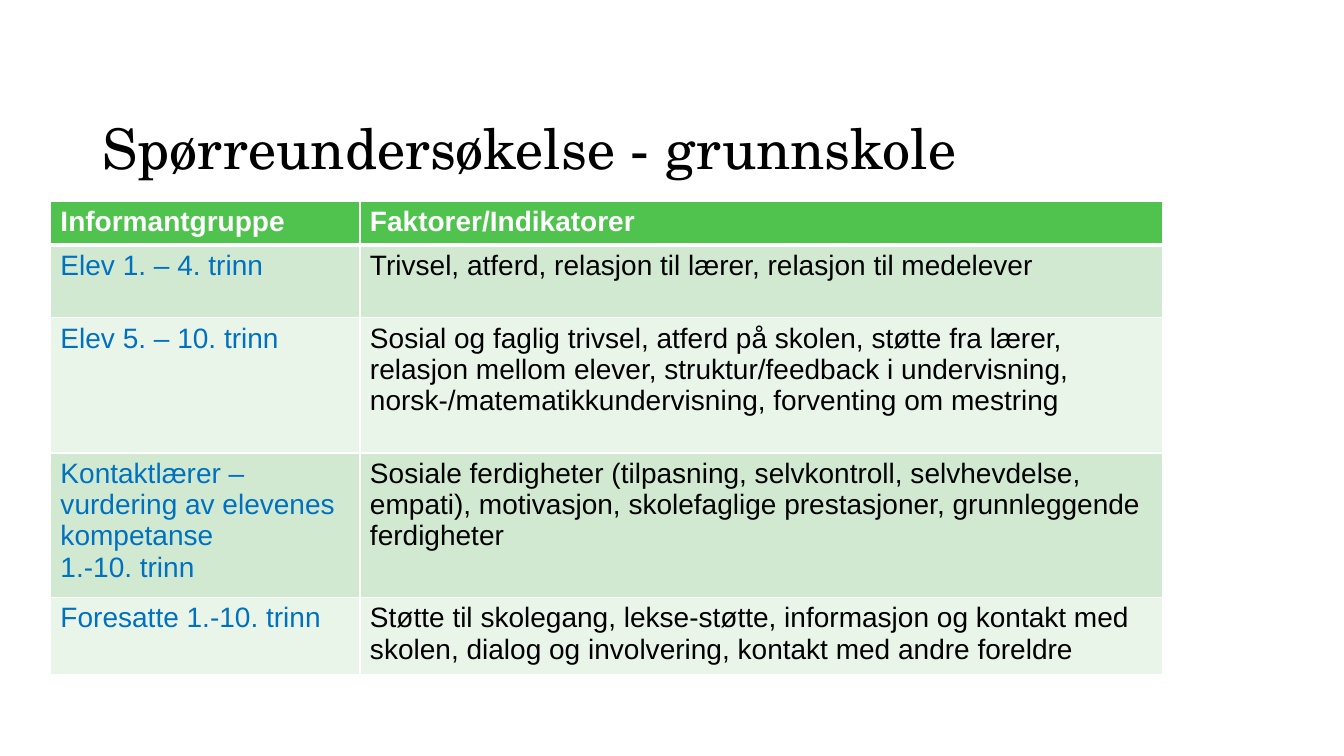
"""Build a slide with a table of survey informant groups and indicators."""
from lxml import etree
from pptx import Presentation
from pptx.dml.color import RGBColor
from pptx.enum.text import MSO_ANCHOR
from pptx.oxml.ns import qn
from pptx.util import Inches, Pt

TITLE = "Spørreundersøkelse - grunnskole"
ROWS = [
    ("Informantgruppe", "Faktorer/Indikatorer"),
    ("Elev 1. – 4. trinn",
     "Trivsel, atferd, relasjon til lærer, relasjon til medelever"),
    ("Elev 5. – 10. trinn",
     "Sosial og faglig trivsel, atferd på skolen, støtte fra lærer, "
     "relasjon mellom elever, struktur/feedback i undervisning, "
     "norsk-/matematikkundervisning, forventing om mestring"),
    ("Kontaktlærer – vurdering av elevenes kompetanse \v1.-10. trinn",
     "Sosiale ferdigheter (tilpasning, selvkontroll, selvhevdelse, empati), "
     "motivasjon, skolefaglige prestasjoner, grunnleggende ferdigheter"),
    ("Foresatte 1.-10. trinn",
     "Støtte til skolegang, lekse-støtte, informasjon og kontakt med skolen, "
     "dialog og involvering, kontakt med andre foreldre"),
]
COLUMN_WIDTHS = (3.07, 7.96)
ROW_HEIGHTS = (0.41, 0.72, 1.34, 1.34, 0.71)

TITLE_FONT = "TeX Gyre Schola"
TABLE_FONT = "Arial"
ANCHOR_BOTTOM = MSO_ANCHOR.BOTTOM
BLACK = RGBColor(0x00, 0x00, 0x00)
WHITE = RGBColor(0xFF, 0xFF, 0xFF)
BLUE = RGBColor(0x00, 0x70, 0xC0)
HEADER_GREEN = RGBColor(0x4F, 0xC3, 0x4E)
BAND_GREENS = (RGBColor(0xE9, 0xF5, 0xE9), RGBColor(0xD0, 0xE9, 0xD0))
COLUMN_COLORS = (BLUE, BLACK)


def style_font(paragraph, name, size, color, bold=False):
    font = paragraph.font
    font.name = name
    font.size = Pt(size)
    font.bold = bold
    font.color.rgb = color


def add_borders(cell, widths):
    properties = cell._tc.get_or_add_tcPr()
    for position, (side, width) in enumerate(widths.items()):
        line = etree.Element(qn(f"a:{side}"), w=str(Pt(width)))
        fill = etree.SubElement(line, qn("a:solidFill"))
        etree.SubElement(fill, qn("a:srgbClr"), val=str(WHITE))
        properties.insert(position, line)


def add_title(slide):
    shape = slide.shapes.add_textbox(
        Inches(0.92), Inches(0.4), Inches(10.2), Inches(1.45))
    frame = shape.text_frame
    frame.word_wrap = True
    frame.vertical_anchor = ANCHOR_BOTTOM
    paragraph = frame.paragraphs[0]
    paragraph.text = TITLE
    paragraph.line_spacing = 0.9
    style_font(paragraph, TITLE_FONT, 40, BLACK)


def add_informant_table(slide):
    table = slide.shapes.add_table(
        len(ROWS), len(COLUMN_WIDTHS), Inches(0.5), Inches(2),
        Inches(sum(COLUMN_WIDTHS)), Inches(sum(ROW_HEIGHTS))).table
    for column, width in zip(table.columns, COLUMN_WIDTHS):
        column.width = Inches(width)
    for row_index, (texts, height) in enumerate(zip(ROWS, ROW_HEIGHTS)):
        table.rows[row_index].height = Inches(height)
        header = row_index == 0
        for column_index, text in enumerate(texts):
            cell = table.cell(row_index, column_index)
            cell.fill.solid()
            cell.fill.fore_color.rgb = (
                HEADER_GREEN if header else BAND_GREENS[row_index % 2])
            paragraph = cell.text_frame.paragraphs[0]
            paragraph.text = text
            color = WHITE if header else COLUMN_COLORS[column_index]
            style_font(paragraph, TABLE_FONT, 20, color, header)
            add_borders(cell, {
                "lnL": 1, "lnR": 1,
                "lnT": 3 if row_index == 1 else 1,
                "lnB": 3 if header else 1})


def main():
    presentation = Presentation()
    presentation.slide_width = Inches(13.33)
    presentation.slide_height = Inches(7.5)
    slide = presentation.slides.add_slide(presentation.slide_layouts[6])
    add_title(slide)
    add_informant_table(slide)
    presentation.save("out.pptx")


if __name__ == "__main__":
    main()
